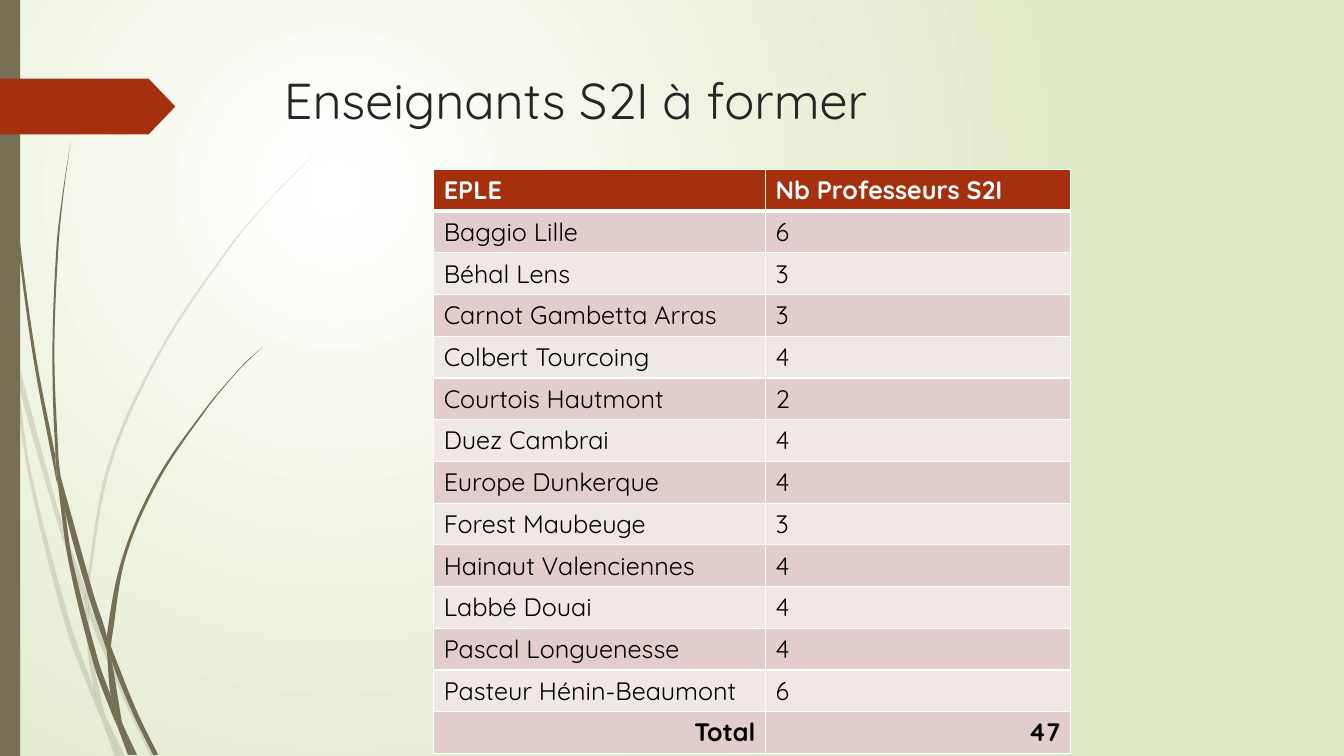
import math

import pptx
import pptx.dml.color
import pptx.enum.shapes
import pptx.enum.text
import pptx.oxml.ns
import pptx.util
from lxml import etree
from pptx.util import Cm

FONT = "Quicksand"
CM_PER_INCH = 2.54
COLORS = {
    "title": "262626",
    "text": "000000",
    "white": "FFFFFF",
    "backdrop": "DFE8C4",
    "grass": "766F54",
    "accent": "A53010",
    "band_dark": "E1CDCC",
    "band_light": "F0E8E7",
}

# Outlines of the grass pieces, as (x, y) in inches on the slide.
PALE_GRASS = [
    [(.11, 3.5), (.09, 3.22), (0, 2.82), (0, 2.99), (.1, 3.44)],
    [(.58, 5.22), (.84, 5.99), (.85, 5.86), (.62, 5.2), (.14, 3.45), (.17, 3.76)],
    [(.92, 6.07), (.88, 5.96), (.88, 6.1), (1.23, 6.94), (1.5, 7.51), (1.55, 7.51), (1.27, 6.92)],
    [(1.19, 7.51), (1.24, 7.51), (1.05, 7.11)],
    [(.93, 6.83), (.7, 6.19), (.31, 4.69), (.17, 3.76), (.11, 3.5), (.28, 4.7), (.65, 6.21),
     (.92, 6.93), (1.01, 7.14), (.99, 7.07)],
    [(.84, 5.99), (.87, 6.46), (.93, 6.83), (.96, 6.92), (1.05, 7.11), (1.03, 7.06),
     (.91, 6.46), (.88, 6.1), (.88, 6.08)],
    [(.88, 5.84), (1.1, 4.62), (1.6, 3.49), (2.29, 2.45), (2.68, 1.98), (2.9, 1.75),
     (3.12, 1.53), (2.89, 1.75), (2.68, 1.97), (2.28, 2.44), (1.58, 3.48), (1.07, 4.61),
     (.85, 5.84), (.85, 5.86), (.88, 5.96)],
    [(1.01, 7.14), (1.14, 7.51), (1.19, 7.51)],
    [(.88, 6.08), (.88, 5.96), (.85, 5.86), (.84, 5.99)],
    [(.96, 6.92), (.93, 6.83), (.99, 7.07), (1.01, 7.14), (1.19, 7.51), (1.05, 7.11)],
]
DARK_GRASS = [
    [(.07, 1.1), (.17, 2.33), (.33, 3.55), (.56, 4.77), (.57, 4.81), (.55, 4.57), (.55, 4.53),
     (.36, 3.55), (.19, 2.32), (.08, 1.09), (.05, .48), (.04, 0), (.03, 0), (.04, .48)],
    [(.88, 5.92), (1.06, 6.45), (1.06, 6.31), (.93, 5.9), (.6, 4.72), (.64, 5.05)],
    [(1.13, 6.49), (1.1, 6.41), (1.11, 6.56), (1.32, 7.08), (1.52, 7.49), (1.57, 7.49),
     (1.36, 7.06)],
    [(1.1, 6.91), (.98, 6.57), (.72, 5.56), (.64, 5.05), (.57, 4.77), (.68, 5.57), (.93, 6.59),
     (1.11, 7.08), (1.17, 7.22), (1.16, 7.17)],
    [(.6, 4.72), (.58, 4.53), (.54, 3.49), (.58, 2.45), (.63, 1.93), (.7, 1.41), (.62, 1.93),
     (.56, 2.45), (.52, 3.49), (.55, 4.49)],
    [(1.33, 7.49), (1.36, 7.49), (1.22, 7.19)],
    [(.57, 4.77), (.64, 5.05), (.6, 4.72), (.55, 4.49), (.55, 4.53)],
    [(1.11, 6.33), (1.25, 5.52), (1.58, 4.76), (2.05, 4.06), (2.31, 3.74), (2.45, 3.59),
     (2.61, 3.44), (2.45, 3.58), (2.31, 3.73), (2.04, 4.05), (1.56, 4.74), (1.22, 5.51),
     (1.06, 6.31), (1.1, 6.41)],
    [(1.17, 7.22), (1.27, 7.49), (1.31, 7.49)],
    [(1.06, 6.45), (1.1, 6.91), (1.16, 7.06), (1.22, 7.19), (1.21, 7.16), (1.11, 6.56),
     (1.09, 6.51)],
    [(1.06, 6.45), (1.09, 6.51), (1.11, 6.56), (1.1, 6.41), (1.06, 6.31)],
    [(1.16, 7.06), (1.1, 6.91), (1.16, 7.17), (1.17, 7.22), (1.3, 7.49), (1.33, 7.49),
     (1.22, 7.19)],
]

SCHOOLS = [
    ("Baggio Lille", 6),
    ("Béhal Lens", 3),
    ("Carnot Gambetta Arras", 3),
    ("Colbert Tourcoing", 4),
    ("Courtois Hautmont", 2),
    ("Duez Cambrai", 4),
    ("Europe Dunkerque", 4),
    ("Forest Maubeuge", 3),
    ("Hainaut Valenciennes", 4),
    ("Labbé Douai", 4),
    ("Pascal Longuenesse", 4),
    ("Pasteur Hénin-Beaumont", 6),
]


def rgb(name):
    return pptx.dml.color.RGBColor.from_string(COLORS[name])


def add_xml(parent, tag, **attributes):
    return etree.SubElement(parent, pptx.oxml.ns.qn(tag), attributes)


def write(frame, text, size=18, color="text", bold=False, align="LEFT"):
    frame.text = text
    paragraph = frame.paragraphs[0]
    paragraph.alignment = pptx.enum.text.PP_ALIGN[align]
    font = paragraph.runs[0].font
    font.name = FONT
    font.size = pptx.util.Pt(size)
    font.bold = bold
    font.color.rgb = rgb(color)


def paint_background(slide):
    """Fill the slide with a circular gradient centred in its upper left quarter."""
    fill = slide.background.fill
    fill.gradient()
    for stop, position, color in zip(fill.gradient_stops, (0, 1), ("white", "backdrop")):
        stop.position = position
        stop.color.rgb = rgb(color)
    gradient = slide.element.find(".//" + pptx.oxml.ns.qn("a:gradFill"))
    linear = gradient.find(pptx.oxml.ns.qn("a:lin"))
    circle = add_xml(gradient, "a:path", path="circle")
    add_xml(circle, "a:fillToRect", l="50000", t="50000", r="100000", b="100000")
    gradient.replace(linear, circle)


def style_shape(shape, color, opacity=100):
    shape.shadow.inherit = False
    shape.fill.solid()
    shape.fill.fore_color.rgb = rgb(color)
    shape.line.fill.background()
    if opacity < 100:
        tint = shape.element.spPr.find(".//" + pptx.oxml.ns.qn("a:srgbClr"))
        add_xml(tint, "a:alpha", val=str(opacity * 1000))


def control_point(before, knot, after):
    """Return the Bezier control point from knot towards after, straight at sharp corners."""
    arriving, leaving = math.dist(before, knot), math.dist(knot, after)
    dot = sum((k - b) * (a - k) for b, k, a in zip(before, knot, after))
    start = before if dot > .5 * arriving * leaving else knot
    reach = leaving / 3 / math.dist(start, after)
    return [k + (a - s) * reach for s, k, a in zip(start, knot, after)]


def smooth_outline(shape):
    """Turn the straight sides of a closed freeform into curves."""
    outline = shape.element.spPr.find(".//" + pptx.oxml.ns.qn("a:path"))
    knots = [(int(pt.get("x")), int(pt.get("y")))
             for pt in outline.iter(pptx.oxml.ns.qn("a:pt"))]
    if knots[-1] == knots[0]:
        knots.pop()
    for child in list(outline)[1:]:
        outline.remove(child)
    count = len(knots)
    for i in range(count):
        a, b, c, d = (knots[(i + shift) % count] for shift in (-1, 0, 1, 2))
        curve = add_xml(outline, "a:cubicBezTo")
        for x, y in (control_point(a, b, c), control_point(d, c, b), c):
            add_xml(curve, "a:pt", x=str(round(x)), y=str(round(y)))
    add_xml(outline, "a:close")


def add_grass(slide, outline, opacity=100):
    knots = [(Cm(x * CM_PER_INCH), Cm(y * CM_PER_INCH)) for x, y in outline]
    builder = slide.shapes.build_freeform(*knots[0])
    builder.add_line_segments(knots[1:], close=True)
    piece = builder.convert_to_shape()
    smooth_outline(piece)
    style_shape(piece, "grass", opacity)


def add_block(slide, kind, top, width, height, color):
    """Add a plain shape that starts at the left edge of the slide."""
    block = slide.shapes.add_shape(
        pptx.enum.shapes.MSO_SHAPE[kind], 0, Cm(top), Cm(width), Cm(height))
    style_shape(block, color)
    return block


def place_title(slide, text):
    title = slide.shapes.title
    title.left, title.top, title.width, title.height = Cm(6.9), Cm(1.61), Cm(26.97), Cm(1.8)
    write(title.text_frame, text, size=36, color="title")
    title.text_frame.vertical_anchor = pptx.enum.text.MSO_ANCHOR.MIDDLE


def border_cell(cell, top=1, bottom=1):
    properties = cell._tc.get_or_add_tcPr()
    for side, points in (("L", 1), ("R", 1), ("T", top), ("B", bottom)):
        line = add_xml(properties, "a:ln" + side, w=str(pptx.util.Pt(points)))
        add_xml(add_xml(line, "a:solidFill"), "a:srgbClr", val=COLORS["white"])


def add_school_table(slide):
    total = sum(count for _, count in SCHOOLS)
    rows = [("EPLE", "Nb Professeurs S2I"), *SCHOOLS, ("Total", total)]
    last = len(rows) - 1
    row_height = Cm(1.03)
    table = slide.shapes.add_table(
        len(rows), 2, Cm(10.93), Cm(4.27), Cm(16.05), row_height * len(rows)).table
    for column, width in zip(table.columns, (8.36, 7.69)):
        column.width = Cm(width)
    for i, values in enumerate(rows):
        table.rows[i].height = row_height
        band = "accent" if i == 0 else "band_dark" if i % 2 else "band_light"
        for cell, value in zip(table.rows[i].cells, values):
            border_cell(cell, top=3 if i == 1 else 1, bottom=3 if i == 0 else 1)
            cell.fill.solid()
            cell.fill.fore_color.rgb = rgb(band)
            write(cell.text_frame, str(value), bold=i in (0, last),
                  color="text" if i else "white", align="RIGHT" if i == last else "LEFT")


def main():
    deck = pptx.Presentation()
    deck.slide_width, deck.slide_height = Cm(33.87), Cm(19.05)
    slide = deck.slides.add_slide(deck.slide_layouts[5])
    paint_background(slide)
    for pieces, opacity in ((PALE_GRASS, 20), (DARK_GRASS, 100)):
        for outline in pieces:
            add_grass(slide, outline, opacity)
    add_block(slide, "RECTANGLE", 0, .51, 19.05, "grass")
    flag = add_block(slide, "PENTAGON", 1.98, 4.42, 1.41, "accent")
    flag.adjustments[0] = .48
    place_title(slide, "Enseignants S2I à former")
    add_school_table(slide)
    deck.save("out.pptx")


if __name__ == "__main__":
    main()
